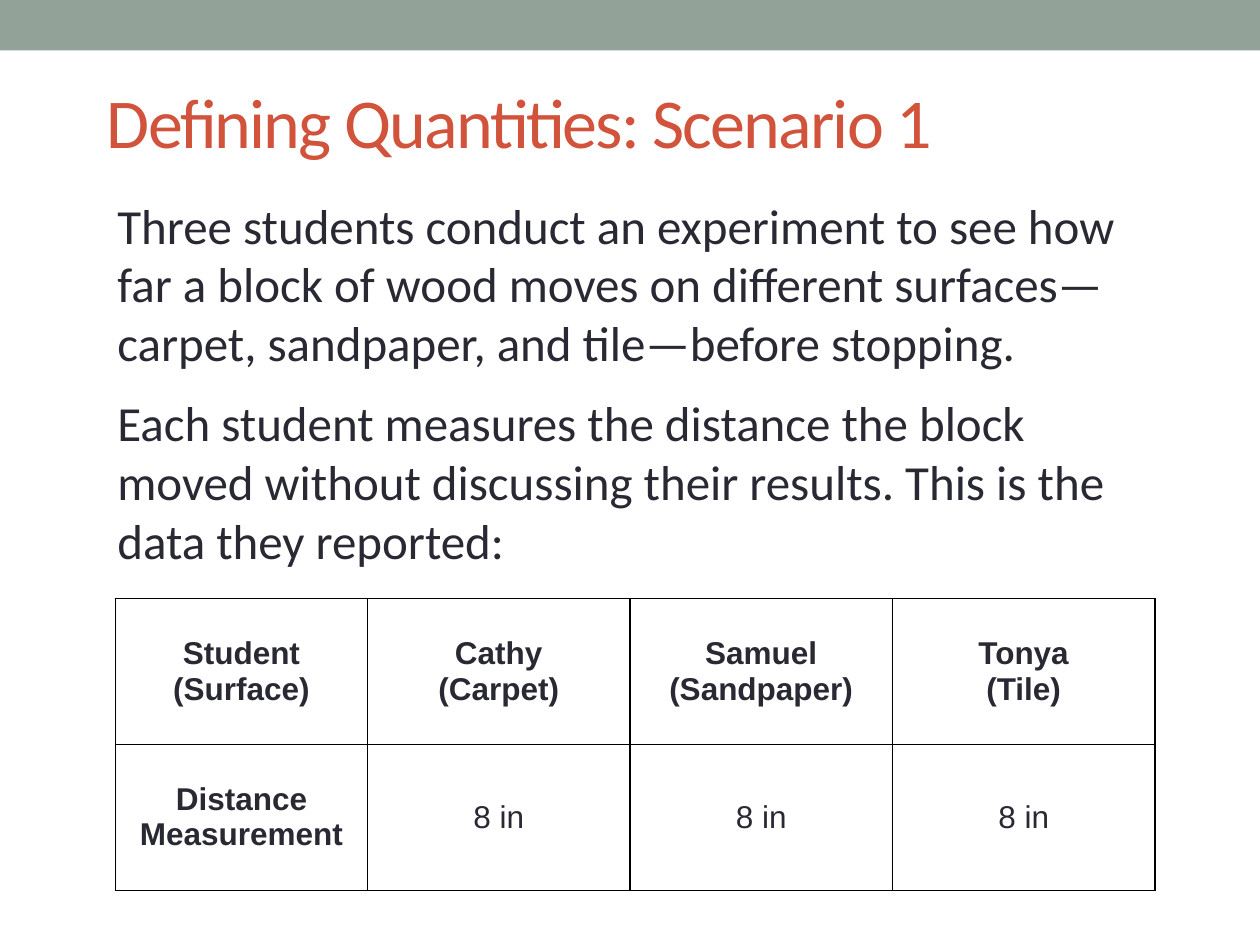
from lxml.etree import SubElement as Sub
from pptx import Presentation as Deck
from pptx.dml.color import RGBColor as RGB
from pptx.enum.shapes import MSO_SHAPE as Form
from pptx.enum.text import MSO_ANCHOR as Anchor, PP_ALIGN as Align
from pptx.oxml.ns import qn
from pptx.util import Inches, Pt

SAGE = RGB(0x93, 0xA2, 0x99)
RUST = RGB(0xD2, 0x53, 0x3C)
INK = RGB(0x29, 0x29, 0x34)
BLACK = RGB(0, 0, 0)

COLS, ROWS = 120, 90

BODY = [
    "Three students conduct an experiment to see how far a block of wood moves "
    "on different surfaces—carpet, sandpaper, and tile—before stopping.",
    "Each student measures the distance the block moved without discussing "
    "their results. This is the data they reported:",
]
DATA = [
    [["Student", "(Surface)"], ["Cathy", "(Carpet)"],
     ["Samuel", "(Sandpaper)"], ["Tonya", "(Tile)"]],
    [["Distance Measurement"], ["8 in"], ["8 in"], ["8 in"]],
]


class Page:
    head, body, grid = "Calibri", "Calibri", "Arial"

    def __init__(self, deck):
        self.slide = deck.slides.add_slide(deck.slide_layouts[6])
        self.col = deck.slide_width / COLS
        self.row = deck.slide_height / ROWS

    def area(self, x, y, w, h):
        return (round(x * self.col), round(y * self.row),
                round(w * self.col), round(h * self.row))

    def words(self, par, text, font, size, color, bold=False):
        run = par.add_run()
        run.text = text
        run.font.name = font
        run.font.size = Pt(size)
        run.font.color.rgb = color
        run.font.bold = bold
        return run

    def band(self, area, color):
        bar = self.slide.shapes.add_shape(Form.RECTANGLE, *self.area(*area))
        bar.shadow.inherit = False
        bar.fill.solid()
        bar.fill.fore_color.rgb = color
        bar.line.fill.background()

    def frame(self, area, anchor):
        frame = self.slide.shapes.add_textbox(*self.area(*area)).text_frame
        frame.word_wrap = True
        frame.vertical_anchor = anchor
        return frame

    def title(self, area, text):
        par = self.frame(area, Anchor.MIDDLE).paragraphs[0]
        run = self.words(par, text, self.head, 40, RUST)
        run.font._element.set("spc", "-100")

    def prose(self, area, texts):
        frame = self.frame(area, Anchor.TOP)
        for i, text in enumerate(texts):
            par = frame.add_paragraph() if i else frame.paragraphs[0]
            par.space_before = Pt(12 if i else 0)
            self.words(par, text, self.body, 28, INK)

    def border(self, cell):
        props = cell._tc.get_or_add_tcPr()
        for side in ("lnL", "lnR", "lnT", "lnB"):
            line = Sub(props, qn("a:" + side), w=str(Pt(1)))
            fill = Sub(line, qn("a:solidFill"))
            Sub(fill, qn("a:srgbClr"), val=str(BLACK))

    def cell(self, cell, lines, bold):
        cell.margin_left = cell.margin_right = Inches(0.07)
        cell.margin_top = cell.margin_bottom = 0
        cell.vertical_anchor = Anchor.MIDDLE
        self.border(cell)
        cell.fill.background()
        frame = cell.text_frame
        for i, text in enumerate(lines):
            par = frame.add_paragraph() if i else frame.paragraphs[0]
            par.alignment = Align.CENTER
            if i == 0:
                par.space_before = Pt(3)
            if i == len(lines) - 1:
                par.space_after = Pt(3)
            self.words(par, text, self.grid, 18, INK, bold)

    def table(self, x, y, wides, high, data):
        area = self.area(x, y, sum(wides), high * len(data))
        table = self.slide.shapes.add_table(len(data), len(wides), *area).table
        table.first_row = table.horz_banding = False
        for col, wide in zip(table.columns, wides):
            col.width = round(wide * self.col)
        for r, line in enumerate(data):
            table.rows[r].height = round(high * self.row)
            for c, lines in enumerate(line):
                self.cell(table.cell(r, c), lines, r == 0 or c == 0)


def main():
    deck = Deck()
    deck.slide_width, deck.slide_height = Inches(10), Inches(7.5)
    page = Page(deck)
    page.band((0, 0, COLS, 4.8), SAGE)
    page.title((9, 5, 105, 13), "Defining Quantities: Scenario 1")
    page.table(11, 57, [24, 25, 25, 25], 13.9, DATA)
    page.prose((10, 18, 102, 37.2), BODY)
    deck.save("out.pptx")


if __name__ == "__main__":
    main()
